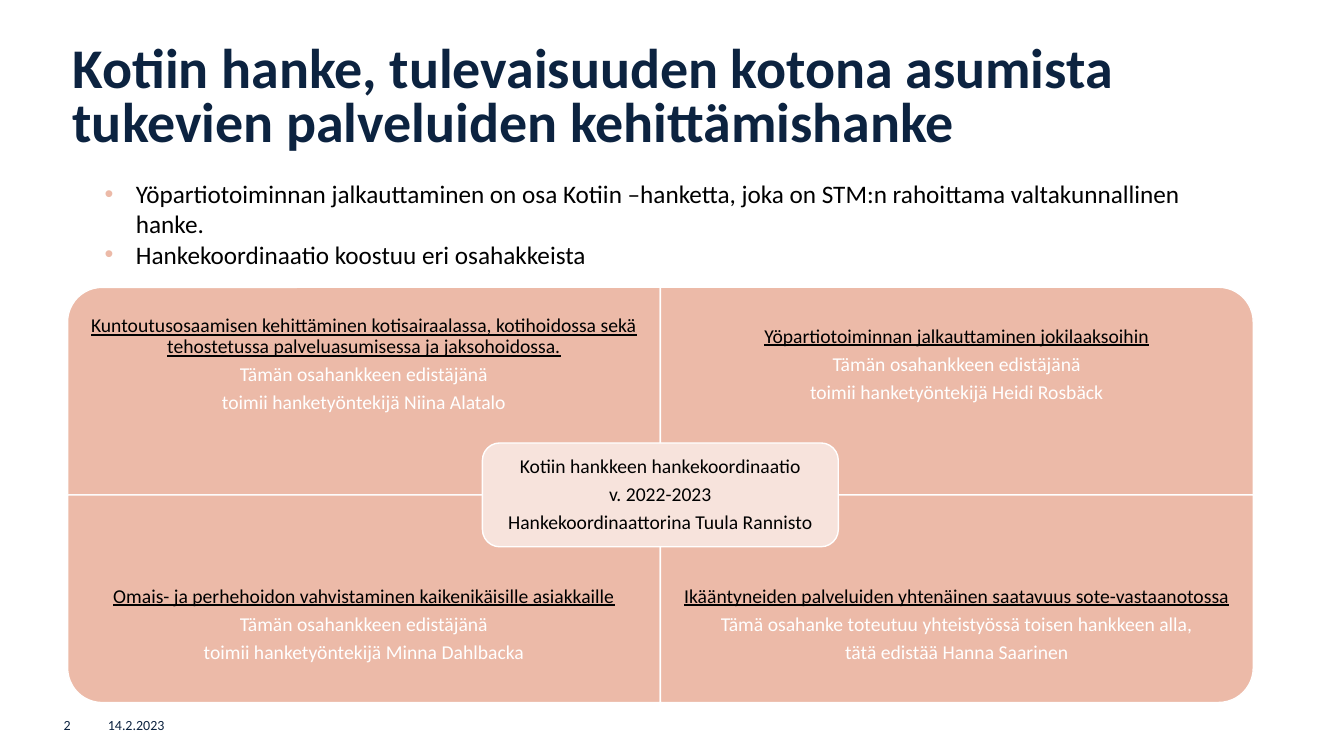
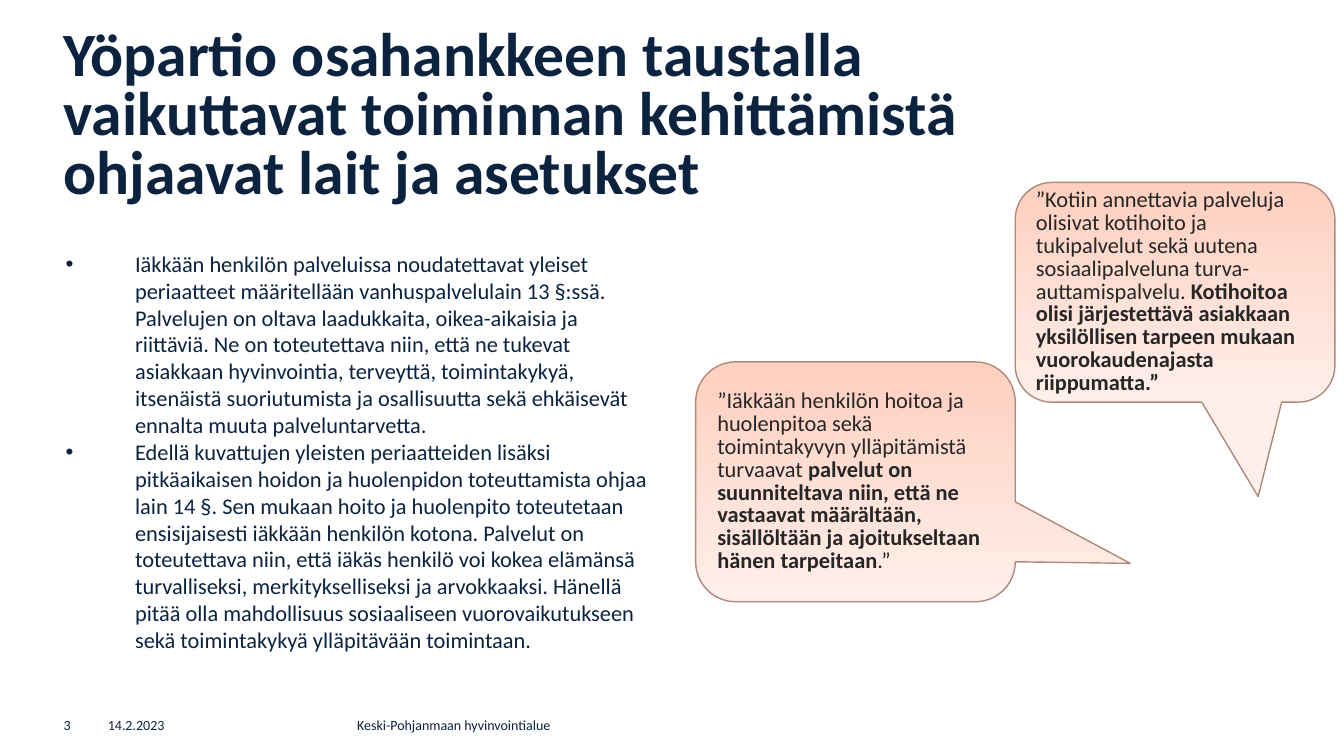
"""Build two slides on the Kotiin home care project and its night patrol."""
from dataclasses import dataclass

import pptx
import pptx.dml.color
import pptx.enum.shapes
import pptx.enum.text
import pptx.oxml.ns
import pptx.util
from lxml import etree

Inches = pptx.util.Inches
Pt = pptx.util.Pt
SHAPE = pptx.enum.shapes.MSO_SHAPE
ALIGN = pptx.enum.text.PP_ALIGN
ANCHOR = pptx.enum.text.MSO_ANCHOR


@dataclass(frozen=True)
class Theme:
    font: str = "Calibri"
    navy: str = "0C2340"
    black: str = "000000"
    white: str = "FFFFFF"
    charcoal: str = "262626"
    salmon: str = "ECBAA8"
    pale: str = "F7E3DC"
    callout_top: str = "FFCFBF"
    callout_bottom: str = "FFEFEA"
    callout_line: str = "AF8A7C"
    intro: int = 18
    body: int = 16
    tile: int = 14
    footer: int = 10
    outline: int = 1


@dataclass(frozen=True)
class Box:
    x: float
    y: float
    w: float
    h: float


@dataclass(frozen=True)
class Run:
    text: str
    size: int
    color: str
    bold: bool = False
    underline: bool = False


@dataclass(frozen=True)
class Format:
    align: ALIGN = ALIGN.LEFT
    anchor: ANCHOR = ANCHOR.TOP
    inset: tuple[float, float] = (0, 0)
    spacing: float = 1.0
    after: float = 0
    indent: float = 0
    bullet_color: str = ""


@dataclass(frozen=True)
class Tile:
    col: int
    row: int
    rotation: int
    heading: str
    lines: tuple[str, str]


@dataclass(frozen=True)
class Callout:
    box: Box
    tail: tuple[float, float]
    runs: tuple[Run, ...]


T = Theme()
TILE_FORMAT = Format(ALIGN.CENTER, ANCHOR.MIDDLE, (0.11, 0.11), 0.9, 4.9)
HUB_FORMAT = Format(ALIGN.CENTER, ANCHOR.MIDDLE, (0.06, 0.06), 0.9, 4.9)
CALLOUT_FORMAT = Format(ALIGN.LEFT, ANCHOR.MIDDLE, (0.1, 0.05), 0.85)
TILE_W, TILE_H, TILE_TEXT_H = 5.88, 2.06, 1.54
GRID_X, GRID_Y = 0.67, 2.85

TILES = (
    Tile(0, 0, 270,
         "Kuntoutusosaamisen kehittäminen kotisairaalassa, kotihoidossa sekä "
         "tehostetussa palveluasumisessa ja jaksohoidossa.",
         ("Tämän osahankkeen edistäjänä", "toimii hanketyöntekijä Niina Alatalo")),
    Tile(1, 0, 0,
         "Yöpartiotoiminnan jalkauttaminen jokilaaksoihin",
         ("Tämän osahankkeen edistäjänä", "toimii hanketyöntekijä Heidi Rosbäck")),
    Tile(0, 1, 180,
         "Omais- ja perhehoidon vahvistaminen kaikenikäisille asiakkaille",
         ("Tämän osahankkeen edistäjänä", "toimii hanketyöntekijä Minna Dahlbacka")),
    Tile(1, 1, 90,
         "Ikääntyneiden palveluiden yhtenäinen saatavuus sote-vastaanotossa",
         ("Tämä osahanke toteutuu yhteistyössä toisen hankkeen alla,",
          "tätä edistää Hanna Saarinen")),
)
HUB_LINES = (
    "Kotiin hankkeen hankekoordinaatio",
    "v. 2022-2023",
    "Hankekoordinaattorina Tuula Rannisto",
)
INTRO = (
    "Yöpartiotoiminnan jalkauttaminen on osa Kotiin –hanketta, joka on STM:n "
    "rahoittama valtakunnallinen hanke.",
    "Hankekoordinaatio koostuu eri osahakkeista",
)
LAWS = (
    "Iäkkään henkilön palveluissa noudatettavat yleiset periaatteet määritellään "
    "vanhuspalvelulain 13 §:ssä. Palvelujen on oltava laadukkaita, oikea-aikaisia ja "
    "riittäviä. Ne on toteutettava niin, että ne tukevat asiakkaan hyvinvointia, "
    "terveyttä, toimintakykyä, itsenäistä suoriutumista ja osallisuutta sekä "
    "ehkäisevät ennalta muuta palveluntarvetta.",
    "Edellä kuvattujen yleisten periaatteiden lisäksi pitkäaikaisen hoidon ja "
    "huolenpidon toteuttamista ohjaa lain 14 §. Sen mukaan hoito ja huolenpito "
    "toteutetaan ensisijaisesti iäkkään henkilön kotona. Palvelut on toteutettava "
    "niin, että iäkäs henkilö voi kokea elämänsä turvalliseksi, merkitykselliseksi ja "
    "arvokkaaksi. Hänellä pitää olla mahdollisuus sosiaaliseen vuorovaikutukseen sekä "
    "toimintakykyä ylläpitävään toimintaan.",
)
CALLOUTS = (
    Callout(Box(10.07, 1.81, 3.17, 2.18), (0.26, 0.93), (
        Run("”Kotiin annettavia palveluja olisivat kotihoito ja tukipalvelut sekä "
            "uutena sosiaalipalveluna turva-auttamispalvelu. ", T.body, T.charcoal),
        Run("Kotihoitoa olisi järjestettävä asiakkaan yksilöllisen tarpeen mukaan "
            "vuorokaudenajasta riippumatta.”", T.body, T.charcoal, bold=True))),
    Callout(Box(6.9, 3.59, 3.17, 2.38), (0.86, 0.34), (
        Run("”Iäkkään henkilön hoitoa ja huolenpitoa sekä toimintakyvyn "
            "ylläpitämistä turvaavat ", T.body, T.charcoal),
        Run("palvelut on suunniteltava niin, että ne vastaavat määrältään, "
            "sisällöltään ja ajoitukseltaan hänen tarpeitaan",
            T.body, T.charcoal, bold=True),
        Run(".”", T.body, T.charcoal))),
)


def rgb(color: str) -> pptx.dml.color.RGBColor:
    return pptx.dml.color.RGBColor.from_string(color)


def place(box: Box) -> tuple[int, ...]:
    return tuple(Inches(v) for v in (box.x, box.y, box.w, box.h))


def add_bullet(p, indent: float, color: str) -> None:
    qn = pptx.oxml.ns.qn
    pPr = p._p.get_or_add_pPr()
    pPr.set("marL", str(Inches(indent)))
    pPr.set("indent", str(-Inches(indent)))
    clr = etree.SubElement(pPr, qn("a:buClr"))
    etree.SubElement(clr, qn("a:srgbClr")).set("val", color)
    etree.SubElement(pPr, qn("a:buFont")).set("typeface", "Arial")
    etree.SubElement(pPr, qn("a:buChar")).set("char", "•")


def write(sp, paragraphs, fmt: Format) -> None:
    tf = sp.text_frame
    tf.word_wrap = True
    tf.vertical_anchor = fmt.anchor
    tf.margin_left = tf.margin_right = Inches(fmt.inset[0])
    tf.margin_top = tf.margin_bottom = Inches(fmt.inset[1])
    for i, runs in enumerate(paragraphs):
        p = tf.add_paragraph() if i else tf.paragraphs[0]
        p.alignment = fmt.align
        p.line_spacing = fmt.spacing
        p.space_after = Pt(fmt.after)
        if fmt.bullet_color:
            add_bullet(p, fmt.indent, fmt.bullet_color)
        for run in runs:
            r = p.add_run()
            r.text = run.text
            r.font.name = T.font
            r.font.size = Pt(run.size)
            r.font.color.rgb = rgb(run.color)
            r.font.bold = run.bold
            r.font.underline = run.underline


def add_text(s, box: Box, paragraphs, fmt: Format = Format()) -> None:
    write(s.shapes.add_textbox(*place(box)), paragraphs, fmt)


def add_shape(s, kind, box: Box, fill: str, line: str):
    sp = s.shapes.add_shape(kind, *place(box))
    sp.shadow.inherit = False
    sp.fill.solid()
    sp.fill.fore_color.rgb = rgb(fill)
    sp.line.color.rgb = rgb(line)
    sp.line.width = Pt(T.outline)
    return sp


def add_title(s, box: Box, text: str, size: int) -> None:
    add_text(s, box, [[Run(text, size, T.navy, bold=True)]], Format(spacing=0.8))


def add_footer(s, number: int, organisation: str = "") -> None:
    parts = [(0.63, 0.41, str(number), ALIGN.LEFT), (1.07, 1.26, "14.2.2023", ALIGN.LEFT)]
    if organisation:
        parts.append((2.37, 4.26, organisation, ALIGN.CENTER))
    for x, w, text, align in parts:
        add_text(s, Box(x, 7.04, w, 0.31), [[Run(text, T.footer, T.navy)]],
                 Format(align, ANCHOR.MIDDLE))


def add_tile(s, tile: Tile) -> None:
    x = GRID_X + tile.col * TILE_W
    y = GRID_Y + tile.row * TILE_H
    w, h = (TILE_H, TILE_W) if tile.rotation % 180 else (TILE_W, TILE_H)
    frame = Box(x + (TILE_W - w) / 2, y + (TILE_H - h) / 2, w, h)
    sp = add_shape(s, SHAPE.ROUND_1_RECTANGLE, frame, T.salmon, T.white)
    sp.rotation = tile.rotation
    paragraphs = [[Run(tile.heading, T.tile, T.black, underline=True)]]
    paragraphs += [[Run(line, T.tile, T.white)] for line in tile.lines]
    text_y = y + tile.row * (TILE_H - TILE_TEXT_H)
    add_text(s, Box(x, text_y, TILE_W, TILE_TEXT_H), paragraphs, TILE_FORMAT)


def add_hub(s) -> None:
    w, h = 3.53, 1.03
    box = Box(GRID_X + TILE_W - w / 2, GRID_Y + TILE_H - h / 2, w, h)
    sp = add_shape(s, SHAPE.ROUNDED_RECTANGLE, box, T.pale, T.white)
    write(sp, [[Run(line, T.tile, T.black)] for line in HUB_LINES], HUB_FORMAT)


def add_callout(s, callout: Callout) -> None:
    sp = add_shape(s, SHAPE.ROUNDED_RECTANGULAR_CALLOUT, callout.box,
                   T.callout_top, T.callout_line)
    sp.adjustments[0], sp.adjustments[1] = callout.tail
    sp.fill.gradient()
    sp.fill.gradient_angle = 270
    for stop, color in zip(sp.fill.gradient_stops, (T.callout_top, T.callout_bottom)):
        stop.color.rgb = rgb(color)
    write(sp, [callout.runs], CALLOUT_FORMAT)


def build_project(s) -> None:
    add_title(s, Box(0.72, 0.45, 11.78, 1.34),
              "Kotiin hanke, tulevaisuuden kotona asumista tukevien palveluiden "
              "kehittämishanke", 40)
    for tile in TILES:
        add_tile(s, tile)
    add_hub(s)
    add_footer(s, 2)
    add_text(s, Box(0.94, 1.72, 11.5, 1.01),
             [[Run(text, T.intro, T.black)] for text in INTRO],
             Format(inset=(0.1, 0.05), indent=0.31, bullet_color=T.salmon))


def build_laws(s) -> None:
    add_title(s, Box(0.63, 0.29, 10.67, 1.06),
              "Yöpartio osahankkeen taustalla vaikuttavat toiminnan kehittämistä "
              "ohjaavat lait ja asetukset", 44)
    add_text(s, Box(0.65, 2.48, 5.78, 4.12),
             [[Run(text, T.body, T.navy)] for text in LAWS],
             Format(indent=0.69, bullet_color=T.navy))
    add_footer(s, 3, "Keski-Pohjanmaan hyvinvointialue")
    for callout in CALLOUTS:
        add_callout(s, callout)


def main() -> None:
    prs = pptx.Presentation()
    prs.slide_width, prs.slide_height = Inches(13.33), Inches(7.5)
    for build in (build_project, build_laws):
        build(prs.slides.add_slide(prs.slide_layouts[6]))
    prs.save("out.pptx")


if __name__ == "__main__":
    main()
